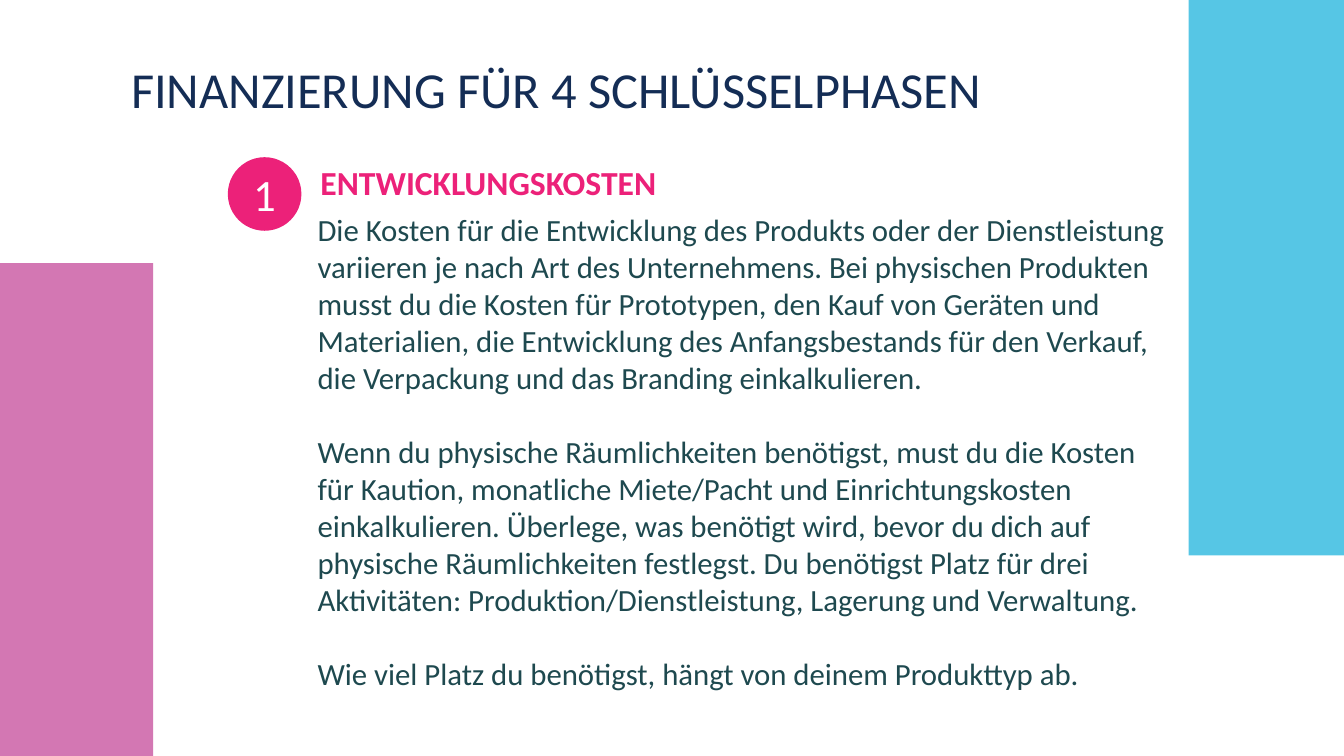
from lxml import etree
from pptx import Presentation
from pptx.dml.color import RGBColor
from pptx.enum.shapes import MSO_SHAPE
from pptx.enum.text import MSO_ANCHOR, MSO_AUTO_SIZE, PP_ALIGN
from pptx.oxml.ns import qn
from pptx.util import Inches, Pt

RECTANGLE = MSO_SHAPE.RECTANGLE
OVAL = MSO_SHAPE.OVAL
TOP = MSO_ANCHOR.TOP
MIDDLE = MSO_ANCHOR.MIDDLE
LEFT = PP_ALIGN.LEFT
CENTER = PP_ALIGN.CENTER
NO_AUTOFIT = MSO_AUTO_SIZE.NONE

FONT = "Calibri"
PINK, WHITE, NAVY, TEAL = "EC2179", "FFFFFF", "142D55", "1E494F"

TITLE = "FINANZIERUNG FÜR 4 SCHLÜSSELPHASEN"
PHASE_NUMBER = "1"
PHASE_HEADING = "ENTWICKLUNGSKOSTEN"
PHASE_PARAGRAPHS = [
    "Die Kosten für die Entwicklung des Produkts oder der Dienstleistung "
    "variieren je nach Art des Unternehmens. Bei physischen Produkten musst du "
    "die Kosten für Prototypen, den Kauf von Geräten und Materialien, die "
    "Entwicklung des Anfangsbestands für den Verkauf, die Verpackung und das "
    "Branding einkalkulieren.",
    "Wenn du physische Räumlichkeiten benötigst, must du die Kosten für Kaution, "
    "monatliche Miete/Pacht und Einrichtungskosten einkalkulieren. Überlege, was "
    "benötigt wird, bevor du dich auf physische Räumlichkeiten festlegst. Du "
    "benötigst Platz für drei Aktivitäten: Produktion/Dienstleistung, Lagerung "
    "und Verwaltung.",
    "Wie viel Platz du benötigst, hängt von deinem Produkttyp ab.",
]


def color(hex_value):
    return RGBColor.from_string(hex_value)


def place(part, left, top, width, height):
    part.left, part.top = Inches(left), Inches(top)
    part.width, part.height = Inches(width), Inches(height)


def write(part, paragraphs, size, hex_value, bold=False, align=LEFT,
          anchor=TOP, gap=0, line_spacing=1.0):
    frame = part.text_frame
    frame.word_wrap = True
    frame.auto_size = NO_AUTOFIT
    frame.vertical_anchor = anchor
    for index, words in enumerate(paragraphs):
        paragraph = frame.add_paragraph() if index else frame.paragraphs[0]
        properties = paragraph._p.get_or_add_pPr()
        properties.set("marL", "0")
        properties.set("indent", "0")
        etree.SubElement(properties, qn("a:buNone"))
        paragraph.alignment = align
        paragraph.line_spacing = line_spacing
        paragraph.space_before = Pt(gap if index else 0)
        run = paragraph.add_run()
        run.text = words
        run.font.name = FONT
        run.font.size = Pt(size)
        run.font.bold = bold
        run.font.color.rgb = color(hex_value)


def add_filled(slide, kind, box, hex_value, opacity=100):
    shape = slide.shapes.add_shape(kind, *map(Inches, box))
    shape.shadow.inherit = False
    shape.fill.solid()
    shape.fill.fore_color.rgb = color(hex_value)
    shape.line.fill.background()
    if opacity < 100:
        tone = shape.fill._xPr.find(".//" + qn("a:srgbClr"))
        etree.SubElement(tone, qn("a:alpha"), val=str(opacity * 1000))
    return shape


def add_side_bands(slide):
    add_filled(slide, RECTANGLE, (-0.02, 2.61, 1.54, 4.89), "C54A9A", 75)
    add_filled(slide, RECTANGLE, (11.79, 0, 1.54, 5.51), "1EB3DD", 75)


def add_title(slide, box):
    title = slide.shapes.title
    place(title, *box)
    write(title, [TITLE], 36, NAVY, line_spacing=0.9)


def add_phase(slide, left, top):
    badge = add_filled(slide, OVAL, (left, top, 0.73, 0.73), PINK)
    write(badge, [PHASE_NUMBER], 32, WHITE, align=CENTER, anchor=MIDDLE)

    heading = slide.shapes.add_textbox(
        Inches(left + 0.82), Inches(top), Inches(8.37), Inches(0.5))
    write(heading, [PHASE_HEADING], 24, PINK, bold=True)

    explanation = slide.placeholders[1]
    place(explanation, left + 0.79, top + 0.48, 8.65, 4.91)
    write(explanation, PHASE_PARAGRAPHS, 22, TEAL, gap=26.5)


def main():
    deck = Presentation()
    deck.slide_width, deck.slide_height = Inches(13.33), Inches(7.5)
    slide = deck.slides.add_slide(deck.slide_layouts[1])
    add_side_bands(slide)
    add_title(slide, (1.2, 0.59, 10.59, 0.9))
    add_phase(slide, 2.26, 1.56)
    deck.save("out.pptx")


if __name__ == "__main__":
    main()
